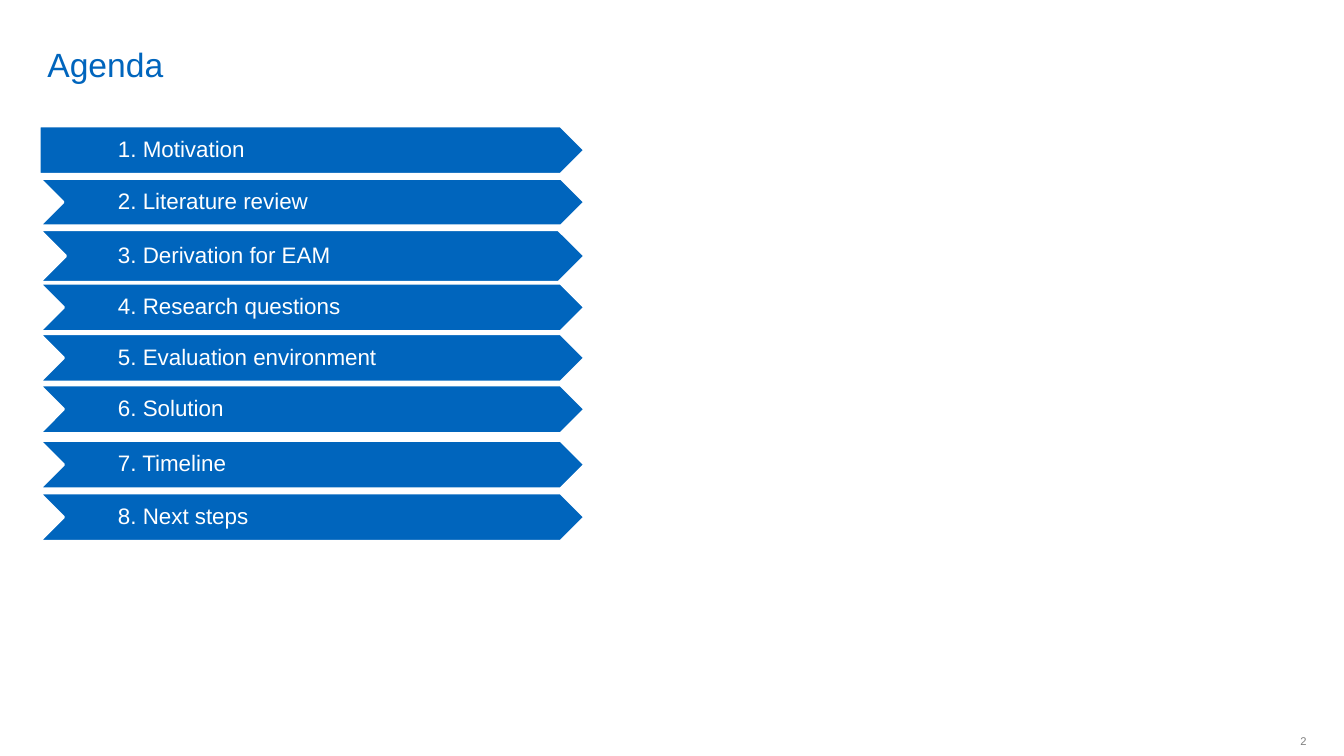
import pptx
import pptx.util
import pptx.dml.color
import pptx.enum.shapes
import pptx.enum.text

PX = 9144
FONT = "Arial"
HUES = {"blue": "0065BD", "white": "FFFFFF", "gray": "808080"}
KINDS = pptx.enum.shapes.MSO_SHAPE
ALIGN = pptx.enum.text.PP_ALIGN
ANCHOR = pptx.enum.text.MSO_ANCHOR

STEPS = [
    ("1. Motivation", 125, 48),
    ("2. Literature review", 177, 47),
    ("3. Derivation for EAM", 228, 52),
    ("4. Research questions", 281, 48),
    ("5. Evaluation environment", 331, 48),
    ("6. Solution", 382, 48),
    ("7. Timeline", 437, 48),
    ("8. Next steps", 489, 48),
]


def scale(*sides):
    return [pptx.util.Emu(side * PX) for side in sides]


def hue(name):
    return pptx.dml.color.RGBColor.from_string(HUES[name])


def write(shape, text, size=16, color="white", align=ALIGN.LEFT,
          anchor=ANCHOR.MIDDLE, inset=(7, 5, 2, 5), wrap=True, lead=None):
    frame = shape.text_frame
    frame.auto_size = pptx.enum.text.MSO_AUTO_SIZE.NONE
    frame.word_wrap = wrap
    frame.vertical_anchor = anchor
    (frame.margin_left, frame.margin_top,
     frame.margin_right, frame.margin_bottom) = scale(*inset)
    para = frame.paragraphs[0]
    para.alignment = align
    if lead:
        para.line_spacing = lead
    run = para.add_run()
    run.text = text
    run.font.name = FONT
    run.font.size = pptx.util.Pt(size)
    run.font.color.rgb = hue(color)


def head(slide, text):
    title = slide.shapes.title
    title.left, title.top, title.width, title.height = scale(37, 5, 1158, 79)
    write(title, text, size=24, color="blue", anchor=ANCHOR.BOTTOM,
          inset=(10, 0, 10, 0))


def step(slide, kind, text, top, height):
    group = slide.shapes.add_group_shape()
    arrow = group.shapes.add_shape(kind, *scale(39, top, 541, height))
    arrow.shadow.inherit = False
    arrow.fill.solid()
    arrow.fill.fore_color.rgb = hue("blue")
    arrow.line.color.rgb = hue("white")
    arrow.line.width = pptx.util.Pt(2)
    label = group.shapes.add_textbox(*scale(110, top, 442, height))
    write(label, text, lead=0.9)


def main():
    deck = pptx.Presentation()
    deck.slide_width, deck.slide_height = scale(1333, 750)
    slide = deck.slides.add_slide(deck.slide_layouts[5])
    head(slide, "Agenda")
    for index, (text, top, height) in enumerate(STEPS):
        kind = KINDS.CHEVRON if index else KINDS.PENTAGON
        step(slide, kind, text, top, height)
    number = slide.shapes.add_textbox(*scale(1260, 719, 36, 32))
    write(number, "2", size=8, color="gray", align=ALIGN.RIGHT,
          inset=(10, 5, 0, 5), wrap=False)
    deck.save("out.pptx")


if __name__ == "__main__":
    main()
